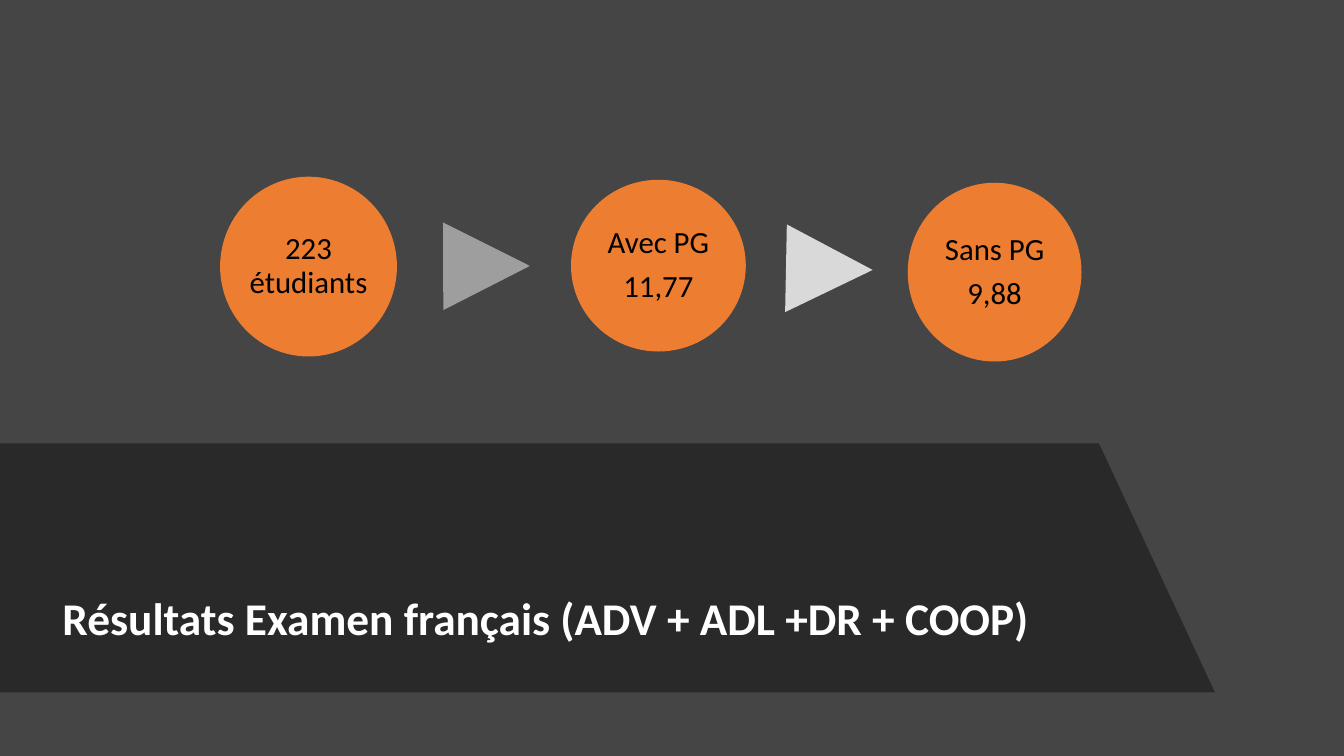
from pptx import Presentation
from pptx.dml.color import RGBColor
from pptx.enum import shapes, text
from pptx.oxml.ns import qn
from pptx.util import Inches, Pt
from lxml import etree

ORANGE = "ED7D31"


def paint(fill, color):
    fill.solid()
    fill.fore_color.rgb = RGBColor.from_string(color)


def write(shape, lines, inset, para_format, font_format, color):
    """Fill a shape with one paragraph per line, anchored in the middle."""
    frame = shape.text_frame
    frame.word_wrap = True
    frame.vertical_anchor = text.MSO_ANCHOR.MIDDLE
    for side, margin in zip(("left", "top", "right", "bottom"), inset):
        setattr(frame, f"margin_{side}", Inches(margin))
    frame.text = "\n".join(lines)
    for para in frame.paragraphs:
        for name, value in para_format.items():
            setattr(para, name, value)
        for span in para.runs:
            for name, value in font_format.items():
                setattr(span.font, name, value)
            span.font.color.rgb = RGBColor.from_string(color)


deck = Presentation()
deck.slide_width, deck.slide_height = Inches(13.33), Inches(7.5)
page = deck.slides.add_slide(deck.slide_layouts[6])
paint(page.background.fill, "454545")

# Translucent title band with a slanted right edge
outline = page.shapes.build_freeform(Inches(0), Inches(4.4))
outline.add_line_segments(
    [(Inches(x), Inches(y)) for x, y in [(10.9, 4.4), (12.05, 6.87), (0, 6.87)]])
band = outline.convert_to_shape()
band.shadow.inherit = False
band.line.fill.background()
paint(band.fill, "262626")
band_color = band.fill._xPr.find(qn("a:solidFill"))[0]
etree.SubElement(band_color, qn("a:alpha"), val="88000")

title = page.shapes.add_textbox(
    Inches(0.42), Inches(5.82), Inches(10.13), Inches(0.68))
write(title, ["Résultats Examen français (ADV + ADL +DR + COOP)"],
      (0.2, 0.05, 0.1, 0.05),
      {"line_spacing": 0.9, "alignment": text.PP_ALIGN.LEFT},
      {"name": "Calibri", "size": Pt(32.4), "bold": True}, "FFFFFF")

# Result circles
circles = [
    (2.19, 1.76, 1.74, 1.77, ["223 étudiants"]),
    (5.67, 1.79, 1.72, 1.69, ["Avec PG", "11,77"]),
    (9.01, 1.82, 1.71, 1.76, ["Sans PG", "9,88"]),
]
for *place, lines in circles:
    circle = page.shapes.add_shape(shapes.MSO_SHAPE.OVAL, *map(Inches, place))
    circle.shadow.inherit = False
    paint(circle.fill, ORANGE)
    paint(circle.line.fill, ORANGE)
    circle.line.width = Pt(1)
    write(circle, lines, (0.02, 0.03, 0.02, 0.03),
          {"line_spacing": 0.9, "space_after": Pt(7.7),
           "alignment": text.PP_ALIGN.CENTER},
          {"name": "Calibri", "size": Pt(22)}, "000000")

# Triangles pointing from one circle to the next
for left, top, turn, color in [(4.39, 2.21, 89.8, "9E9E9E"),
                               (7.79, 2.24, 91.1, "D9D9D9")]:
    pointer = page.shapes.add_shape(
        shapes.MSO_SHAPE.ISOSCELES_TRIANGLE,
        Inches(left), Inches(top), Inches(0.87), Inches(0.86))
    pointer.rotation = turn
    pointer.shadow.inherit = False
    pointer.line.fill.background()
    paint(pointer.fill, color)

deck.save("out.pptx")
